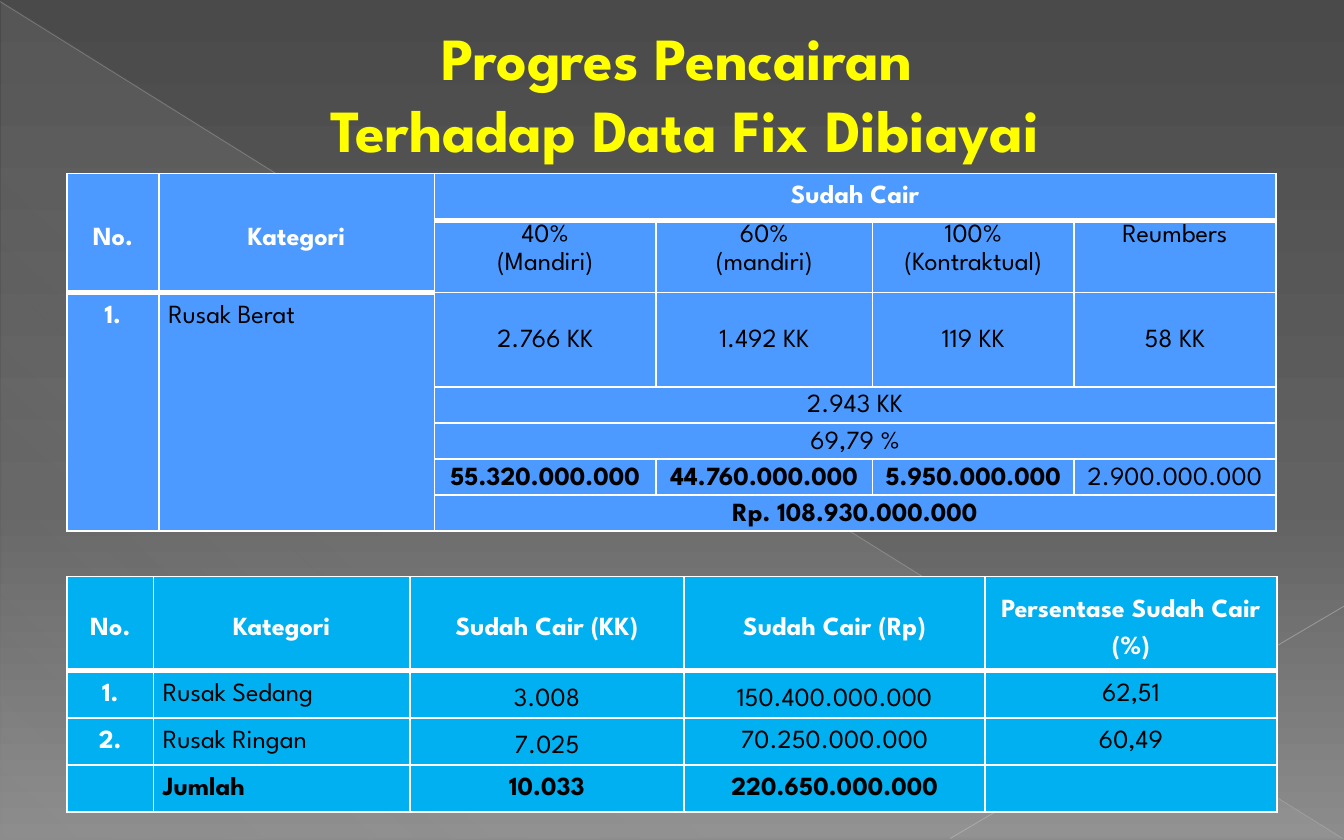
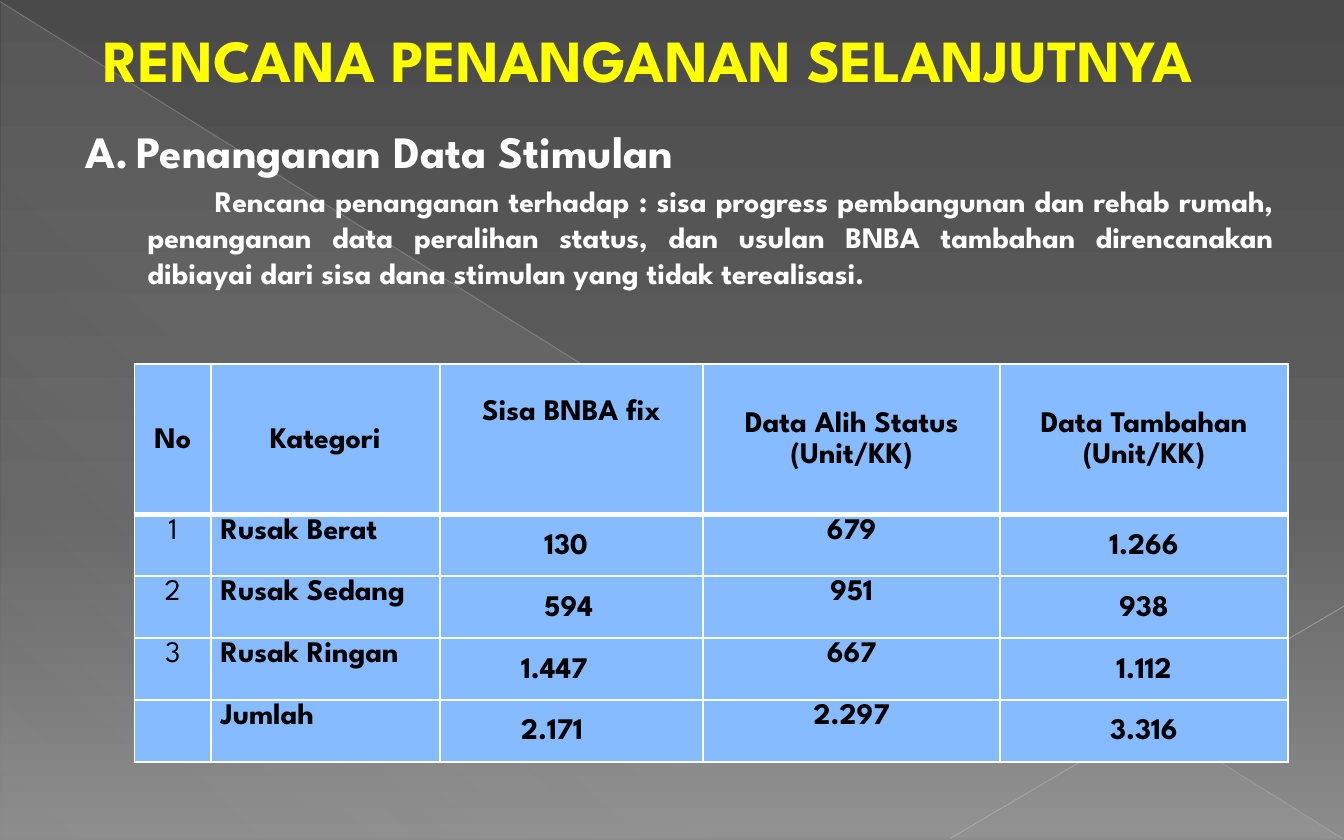
import pptx
import pptx.dml.color
import pptx.enum.shapes
import pptx.enum.text
import pptx.oxml
import pptx.oxml.ns
import pptx.util
from pptx.util import Cm

COLORS = {
    "white": "FFFFFF", "black": "000000", "yellow": "FFFF00",
    "blue": "4C99FF", "cyan": "00B0F0", "pale": "87BBFF",
    "dark": "4A4A4A", "middle": "626262", "light": "8C8C8C",
    "veil": "D2D2D2", "diagonal": "BFBFBF", "corner": "C6C6C6",
}
FONT = "League Spartan"
ALIGN = pptx.enum.text.PP_ALIGN
ANCHOR = pptx.enum.text.MSO_ANCHOR
NAMESPACE = pptx.oxml.ns.nsdecls("a")
qn = pptx.oxml.ns.qn


def rgb(name):
    return pptx.dml.color.RGBColor.from_string(COLORS[name])


def element(xml):
    return pptx.oxml.parse_xml(xml.replace(">", f" {NAMESPACE}>", 1))


def set_opacity(color, percent):
    color.append(element(f'<a:alpha val="{percent * 1000}"></a:alpha>'))


class Slides:
    def __init__(self):
        self.deck = pptx.Presentation()
        self.deck.slide_width = Cm(25.4)
        self.deck.slide_height = Cm(15.88)
        self.page = None

    def new_page(self):
        self.page = self.deck.slides.add_slide(self.deck.slide_layouts[6])
        self.gradient(self.page.background.fill, self.page._element, 90,
                      [(0, "dark", 100), (60, "middle", 100), (100, "light", 100)])
        veil = self.page.shapes.add_shape(
            pptx.enum.shapes.MSO_SHAPE.RIGHT_TRIANGLE,
            Cm(0.03), Cm(0.03), Cm(25.35), Cm(15.82))
        veil.shadow.inherit = False
        veil.line.fill.background()
        self.gradient(veil.fill, veil._element, 133,
                      [(0, "veil", 10), (70, "veil", 8), (100, "veil", 1)])
        self.line((0, 0.03), (25.37, 15.85), "diagonal", 0.39, 35)
        self.line((25.4, 11.46), (17.96, 15.85), "corner", 0.47, 45)

    def gradient(self, fill, owner, angle, stops):
        fill.gradient()
        fill.gradient_angle = 360 - angle
        stop_list = owner.find(".//" + qn("a:gsLst"))
        for stop in list(stop_list):
            stop_list.remove(stop)
        for position, name, opacity in stops:
            stop = element(f'<a:gs pos="{position * 1000}">'
                           f'<a:srgbClr val="{COLORS[name]}"/></a:gs>')
            if opacity < 100:
                set_opacity(stop[0], opacity)
            stop_list.append(stop)

    def line(self, start, end, color, width, opacity):
        line = self.page.shapes.add_connector(
            pptx.enum.shapes.MSO_CONNECTOR.STRAIGHT,
            *(Cm(value) for value in start + end))
        line.line.color.rgb = rgb(color)
        line.line.width = pptx.util.Pt(width)
        properties = line._element.spPr
        set_opacity(properties.find(".//" + qn("a:srgbClr")), opacity)
        properties.append(element("<a:effectLst></a:effectLst>"))

    def style(self, para, size, color, bold, align):
        para.alignment = align
        para.font.name = FONT
        para.font.size = pptx.util.Pt(size)
        para.font.bold = bold
        para.font.color.rgb = rgb(color)

    def text(self, place, text, size, color="white", align=ALIGN.LEFT,
             anchor=ANCHOR.TOP, margin=0, indent=0, numbering=None):
        box = self.page.shapes.add_textbox(*(Cm(value) for value in place))
        frame = box.text_frame
        frame.word_wrap = True
        frame.vertical_anchor = anchor
        para = frame.paragraphs[0]
        para.text = text
        properties = para._p.get_or_add_pPr()
        properties.set("marL", str(Cm(margin)))
        properties.set("indent", str(Cm(indent)))
        if numbering:
            properties.append(element(f'<a:buAutoNum type="{numbering}"></a:buAutoNum>'))
        self.style(para, size, color, True, align)

    def title(self, place, text, **layout):
        self.text(place, text, 32, "yellow", **layout)

    def table(self, left, top, widths, heights, fill, heavy):
        frame = self.page.shapes.add_table(
            len(heights), len(widths), Cm(left), Cm(top),
            Cm(sum(widths)), Cm(sum(heights)))
        grid = frame.table
        grid.first_row = grid.horz_banding = False
        for column, width in zip(grid.columns, widths):
            column.width = Cm(width)
        for row, height in zip(grid.rows, heights):
            row.height = Cm(height)
        for row in range(len(heights)):
            for column, last in enumerate(heavy):
                cell = grid.cell(row, column)
                cell.margin_left = cell.margin_right = Cm(0.18)
                cell.margin_top = cell.margin_bottom = 0
                self.borders(cell, 3 if 0 < row <= last + 1 else 1,
                             3 if row <= last else 1)
                cell.fill.solid()
                cell.fill.fore_color.rgb = rgb(fill)
        return grid

    def borders(self, cell, top, bottom):
        for side, width in zip("LRTB", (1, 1, top, bottom)):
            cell._tc.get_or_add_tcPr().append(element(
                f'<a:ln{side} w="{pptx.util.Pt(width)}"><a:solidFill>'
                f'<a:srgbClr val="{COLORS["white"]}"/></a:solidFill></a:ln{side}>'))

    def label(self, cell, text, size=14, color="black", bold=False,
              align=ALIGN.CENTER, anchor=ANCHOR.MIDDLE, spacing=1.15):
        cell.vertical_anchor = anchor
        cell.text_frame.text = text
        for para in cell.text_frame.paragraphs:
            para.line_spacing = spacing
            self.style(para, size, color, bold, align)


def heavy_damage_table(slides):
    grid = slides.table(1.27, 3.28, [1.73, 5.21, 4.19, 4.09, 3.81, 3.81],
                        [0.71, 1.17, 1.78] + [0.56] * 4, "blue", [1, 1, 0, 0, 0, 0])
    for column in (0, 1):
        grid.cell(0, column).merge(grid.cell(1, column))
        grid.cell(2, column).merge(grid.cell(6, column))
    for row in (0, 3, 4, 6):
        grid.cell(row, 2).merge(grid.cell(row, 5))

    header = {"color": "white", "bold": True, "spacing": 1.5}
    slides.label(grid.cell(0, 0), "No.", **header)
    slides.label(grid.cell(0, 1), "Kategori", **header)
    slides.label(grid.cell(0, 2), "Sudah Cair", anchor=ANCHOR.TOP, **header)
    slides.label(grid.cell(2, 0), "1.", anchor=ANCHOR.TOP, **header)
    slides.label(grid.cell(2, 1), "Rusak Berat", align=ALIGN.LEFT,
                 anchor=ANCHOR.TOP, spacing=1.5)

    stages = [
        ("40%\n(Mandiri)", "2.766 KK", "55.320.000.000"),
        ("60%\n(mandiri)", "1.492 KK", "44.760.000.000"),
        ("100%\n(Kontraktual)", "119 KK", "5.950.000.000"),
        ("Reumbers", "58 KK", "2.900.000.000"),
    ]
    for column, (stage, families, amount) in enumerate(stages, 2):
        slides.label(grid.cell(1, column), stage, anchor=ANCHOR.TOP)
        slides.label(grid.cell(2, column), families)
        slides.label(grid.cell(5, column), amount, bold=column < 5)
    slides.label(grid.cell(3, 2), "2.943 KK")
    slides.label(grid.cell(4, 2), "69,79 %")
    slides.label(grid.cell(6, 2), "Rp. 108.930.000.000", bold=True)


def lighter_damage_table(slides):
    rows = [
        ("No.", "Kategori", "Sudah Cair (KK)", "Sudah Cair (Rp)", "Persentase Sudah Cair (%)"),
        ("1.", "Rusak Sedang", "3.008", "150.400.000.000", "62,51"),
        ("2.", "Rusak Ringan", "7.025", "70.250.000.000", "60,49"),
        ("", "Jumlah", "10.033", "220.650.000.000", ""),
    ]
    centred = {(1, 2), (2, 2), (1, 3)}
    grid = slides.table(1.27, 10.9, [1.63, 4.85, 5.18, 5.69, 5.51],
                        [1.57] + [0.78] * 3, "cyan", [0] * 5)
    for row, texts in enumerate(rows):
        for column, text in enumerate(texts):
            heading = row == 0 or column == 0
            middle = row == 0 or (row, column) in centred
            slides.label(grid.cell(row, column), text, spacing=1.5,
                         color="white" if heading else "black",
                         bold=heading or row == 3,
                         align=ALIGN.LEFT if row and column == 1 else ALIGN.CENTER,
                         anchor=ANCHOR.MIDDLE if middle else ANCHOR.TOP)


def remaining_data_table(slides):
    rows = [
        ("No", "Kategori", "Sisa BNBA fix", "Data Alih Status (Unit/KK)", "Data Tambahan (Unit/KK)"),
        ("1", "Rusak Berat", "130", "679", "1.266"),
        ("2", "Rusak Sedang", "594", "951", "938"),
        ("3", "Rusak Ringan", "1.447", "667", "1.112"),
        ("", "Jumlah", "2.171", "2.297", "3.316"),
    ]
    grid = slides.table(2.54, 6.88, [1.45, 4.32, 4.98, 5.61, 5.44],
                        [2.84] + [1.17] * 4, "pale", [0] * 5)
    for row, texts in enumerate(rows):
        for column, text in enumerate(texts):
            middle = column in (2, 4) if row else column != 2
            slides.label(grid.cell(row, column), text, 16,
                         bold=row == 0 or column > 0,
                         align=ALIGN.LEFT if row and column in (1, 2) else ALIGN.CENTER,
                         anchor=ANCHOR.MIDDLE if middle else ANCHOR.TOP)
        if row:
            grid.cell(row, 2).margin_left = Cm(1.98 if row < 3 else 1.54)
    grid.cell(0, 2).margin_top = Cm(0.6)


def main():
    slides = Slides()

    slides.new_page()
    slides.title((0.84, 0.2, 22.86, 3.1), "Progres Pencairan \nTerhadap Data Fix Dibiayai",
                 align=ALIGN.CENTER, anchor=ANCHOR.MIDDLE, margin=1.35)
    heavy_damage_table(slides)
    lighter_damage_table(slides)

    slides.new_page()
    slides.title((1.7, 0.3, 22.66, 1.63), "RENCANA PENANGANAN SELANJUTNYA")
    slides.text((1.37, 2.21, 22.48, 1.27), "Penanganan Data Stimulan", 24,
                align=ALIGN.JUSTIFY, margin=0.97, indent=-0.97, numbering="alphaUcPeriod")
    remaining_data_table(slides)
    slides.text((2.54, 3.33, 21.79, 3),
                "Rencana penanganan terhadap : sisa progress pembangunan dan rehab rumah, "
                "penanganan data peralihan status, dan usulan BNBA tambahan direncanakan "
                "dibiayai dari sisa dana stimulan yang tidak terealisasi.",
                16, align=ALIGN.JUSTIFY, indent=1.27)

    slides.deck.save("out.pptx")


if __name__ == "__main__":
    main()
